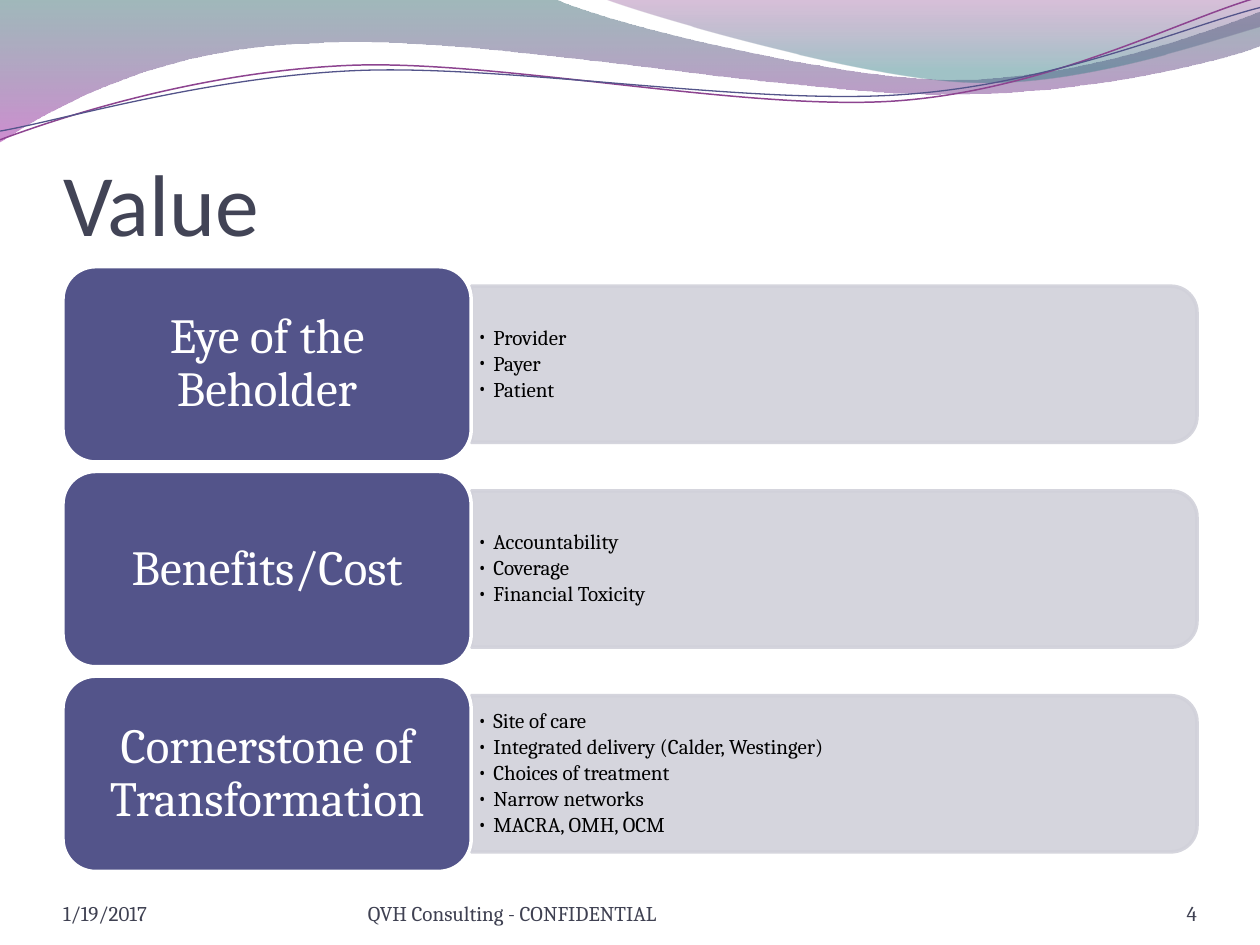
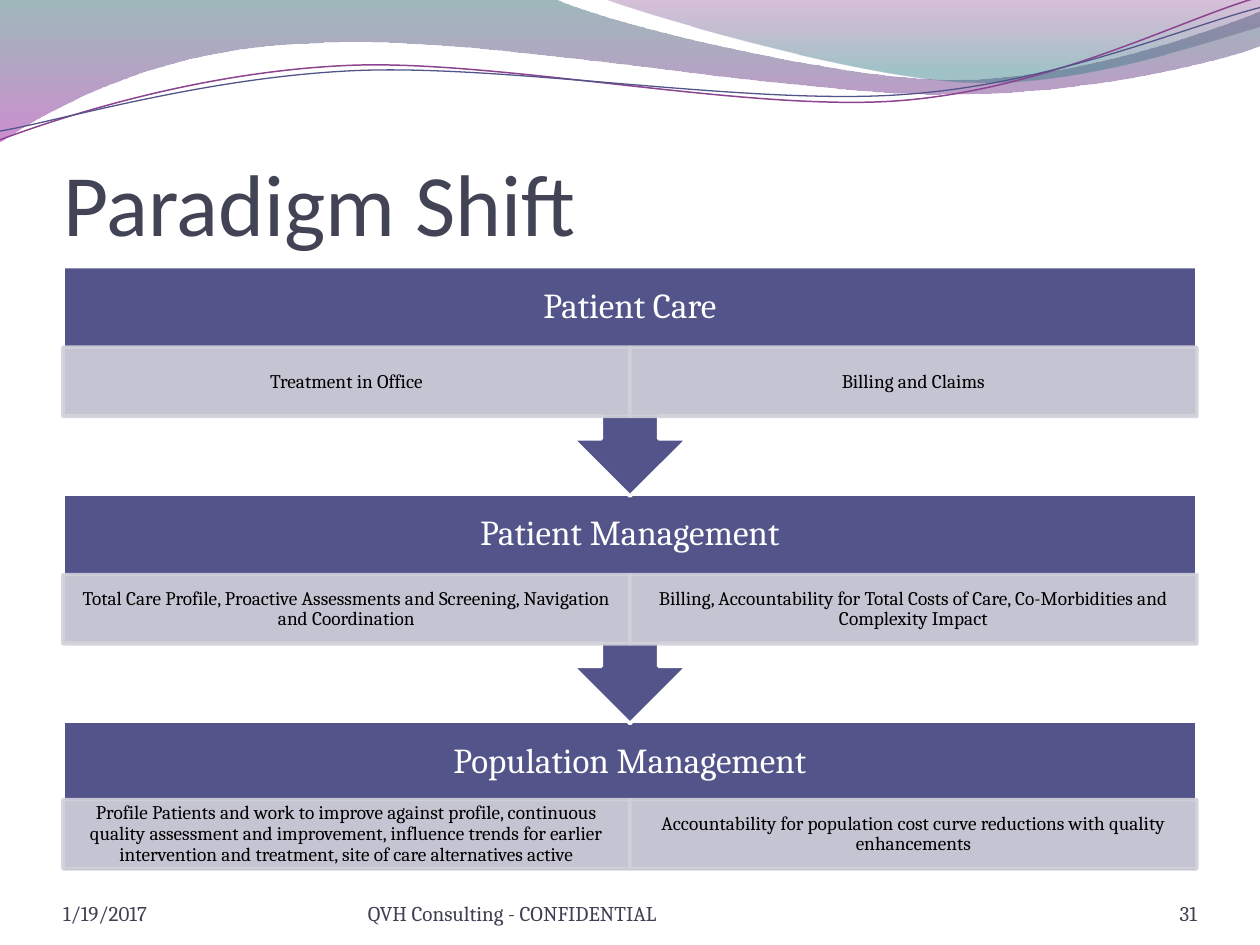
from collections import namedtuple
from dataclasses import dataclass
from itertools import cycle

from lxml.etree import SubElement
from pptx import Presentation
from pptx.dml.color import RGBColor as Rgb
from pptx.enum.shapes import MSO_SHAPE as Form
from pptx.enum.text import MSO_ANCHOR as Anchor, MSO_AUTO_SIZE as Fit, PP_ALIGN as Align
from pptx.oxml.ns import qn
from pptx.util import Pt

Box = namedtuple("Box", "x y w h")


@dataclass(frozen=True)
class Theme:
    head: str = "Calibri"
    body: str = "Cambria"
    title: str = "424456"
    foot: str = "3F4152"
    main: str = "53548A"
    pale: str = "D1D1DA"
    plum: str = "8D4490"
    white: str = "FFFFFF"
    black: str = "000000"
    teal: tuple = ((0, "2D6368", 45), (1, "A530A9", 55))
    rose: tuple = ((0, "7F2F82", 30), (0.8, "2F7B82", 45))
    huge: int = 50
    large: int = 28
    mid: int = 20
    small: int = 12
    tiny: int = 11
    edge: int = 2


T = Theme()
PAGE = Box(0, 0, 720, 540)
TITLE = Box(36, 55.4, 648, 90)
BODY = Box(36, 152.4, 648, 345.6)
FOOT = Box(36, 500.4, 648, 28.8)

SWEEP = [(0, 0), (316.8, -0.7),
         (342.7, 12.2, 478.1, 45.4, 545.8, 45.4), (614.2, 45.4, 689.8, 18.7, 720, 6.5),
         (720.7, 25.9), (707.8, 31.7, 626.4, 54.7, 537.1, 54),
         (447.8, 54, 275, 20.2, 185, 24.5), (92.9, 25.9, 33.1, 59.8, -0.7, 81.4)]
CREST = [(344.9, -0.7), (366.5, 7.9, 491, 44.6, 553.7, 46.8),
         (616.3, 49.7, 691.9, 23, 720, 15.1), (720, 0)]
UPPER = [(0, 79.9), (34.6, 67, 113.8, 41, 199.4, 37.4),
         (284.4, 33.8, 427, 64.1, 513.4, 57.6), (599.8, 51.1, 675.4, 10.8, 718.6, -1.4)]
LOWER = [(0, 74.9), (33.8, 69.1, 118.1, 43.9, 203.8, 40.3),
         (290.2, 36.7, 429.8, 60.5, 516.2, 54), (601.9, 48.2, 677.5, 15.1, 720, 4.3)]

VALUES = [
    ("Eye of the Beholder", ["Provider", "Payer", "Patient"]),
    ("Benefits/Cost", ["Accountability", "Coverage", "Financial Toxicity"]),
    ("Cornerstone of Transformation",
     ["Site of care", "Integrated delivery (Calder, Westinger)", "Choices of treatment",
      "Narrow networks", "MACRA, OMH, OCM"]),
]
STAGES = [
    ("Patient Care", ["Treatment in Office", "Billing and Claims"]),
    ("Patient Management",
     ["Total Care Profile, Proactive Assessments and Screening, Navigation and Coordination",
      "Billing, Accountability for Total Costs of Care, Co-Morbidities and Complexity Impact"]),
    ("Population Management",
     ["Profile Patients and work to improve against profile, continuous quality assessment "
      "and improvement, influence trends for earlier intervention and treatment, "
      "site of care alternatives active",
      "Accountability for population cost curve reductions with quality enhancements"]),
]


def rgb(code):
    return Rgb.from_string(code)


def points(box):
    return [Pt(side) for side in box]


def fade(shape, *levels):
    for node, level in zip(shape.element.iter(qn("a:srgbClr")), cycle(levels)):
        SubElement(node, qn("a:alpha")).set("val", str(level * 1000))


def bend(shape, steps):
    lines = iter(list(shape.element.iter(qn("a:lnTo"))))
    for step in steps[1:]:
        first = next(lines)
        if len(step) == 6:
            first.tag = qn("a:cubicBezTo")
            for _ in range(2):
                line = next(lines)
                first.append(line[0])
                line.getparent().remove(line)


def wave(slide, box, steps, close):
    spots = [(Pt(box.x + step[i]), Pt(box.y + step[i + 1]))
             for step in steps for i in range(0, len(step), 2)]
    pen = slide.shapes.build_freeform(*spots[0])
    pen.add_line_segments(spots[1:], close=close)
    shape = pen.convert_to_shape()
    bend(shape, steps)
    shape.shadow.inherit = False
    return shape


def band(slide, box):
    for steps, stops in ((SWEEP, T.teal), (CREST, T.rose)):
        area = wave(slide, box, steps, True)
        area.line.fill.background()
        area.fill.gradient()
        area.fill.gradient_angle = 270
        for stop, (place, code, _) in zip(area.fill.gradient_stops, stops):
            stop.position = place
            stop.color.rgb = rgb(code)
        fade(area, *[level for _, _, level in stops])
    for steps, code, width in ((UPPER, T.plum, 0.85), (LOWER, T.main, 0.75)):
        curve = wave(slide, box, steps, False)
        curve.fill.background()
        curve.line.color.rgb = rgb(code)
        curve.line.width = Pt(width)


def write(frame, lines, size, ink, pad=(0, 0, 0, 0), align=Align.CENTER,
          anchor=Anchor.MIDDLE, face=T.body, lead=0.9, dots=False):
    frame.word_wrap = True
    frame.auto_size = Fit.NONE
    frame.vertical_anchor = anchor
    (frame.margin_left, frame.margin_top,
     frame.margin_right, frame.margin_bottom) = points(pad)
    for n, line in enumerate(lines):
        para = frame.add_paragraph() if n else frame.paragraphs[0]
        para.text = line
        para.alignment = align
        para.line_spacing = lead
        if dots:
            para.space_after = Pt(1.9)
            props = para._p.get_or_add_pPr()
            props.set("marL", str(Pt(9)))
            props.set("indent", str(-Pt(9)))
            SubElement(props, qn("a:buFont")).set("typeface", face)
            SubElement(props, qn("a:buChar")).set("char", "•")
        font = para.font
        font.name, font.size = face, Pt(size)
        font.color.rgb = rgb(ink)


def label(slide, box, lines, size, ink, **style):
    write(slide.shapes.add_textbox(*points(box)).text_frame, lines, size, ink, **style)


def block(slide, form, box, fill, edge, turn=0):
    shape = slide.shapes.add_shape(form, *points(box))
    shape.shadow.inherit = False
    shape.rotation = turn
    shape.fill.solid()
    shape.fill.fore_color.rgb = rgb(fill)
    shape.line.color.rgb = rgb(edge)
    shape.line.width = Pt(T.edge)
    return shape


def footer(slide, box, number):
    parts = ((0, 168, "1/19/2017", Align.LEFT),
             (174.2, 264, "QVH Consulting - CONFIDENTIAL", Align.LEFT),
             (box.w - 60, 60, number, Align.RIGHT))
    for x, w, line, align in parts:
        label(slide, Box(box.x + x, box.y, w, box.h), [line], T.small, T.foot,
              align=align, anchor=Anchor.BOTTOM, lead=1)


def start(deck, title, number):
    slide = deck.slides.add_slide(deck.slide_layouts[5])
    band(slide, PAGE)
    head = slide.shapes.title
    head.left, head.top, head.width, head.height = points(TITLE)
    write(head.text_frame, [title], T.huge, T.title, pad=(0, 3.6, 0, 0),
          align=Align.LEFT, anchor=Anchor.BOTTOM, face=T.head, lead=1)
    footer(slide, FOOT, number)
    return slide


def card(slide, box, name, items):
    left = box.w * 0.36
    wide, tall = box.w - left, box.h * 0.8
    mid = Box(box.x + left + wide / 2, box.y + box.h / 2, wide, tall)
    panel = block(slide, Form.ROUND_2_SAME_RECTANGLE,
                  Box(mid.x - tall / 2, mid.y - wide / 2, tall, wide), T.pale, T.pale, 90)
    fade(panel, 90)
    label(slide, Box(box.x + left, mid.y - 40.3, wide - 4, 80.6), items, T.small, T.black,
          pad=(3.6, 2.2, 3.6, 2.2), align=Align.LEFT, dots=True)
    tile = block(slide, Form.ROUNDED_RECTANGLE, Box(box.x, box.y, left, box.h),
                 T.main, T.white)
    write(tile.text_frame, [name], T.large, T.white, pad=(8.6, 4.3, 8.6, 4.3))


def cards(slide, box):
    gap = 5.4
    tall = (box.h - gap * (len(VALUES) - 1)) / len(VALUES)
    for n, (name, items) in enumerate(VALUES):
        card(slide, Box(box.x, box.y + n * (tall + gap), box.w, tall), name, items)


def stage(slide, box, name, cells, last):
    if last:
        block(slide, Form.RECTANGLE, box, T.main, T.white)
    else:
        block(slide, Form.UP_ARROW_CALLOUT, box, T.main, T.white, 180)
    label(slide, Box(box.x, box.y, box.w, 46), [name], T.mid, T.white,
          pad=(11.4, 11.4, 11.4, 11.4))
    wide = box.w / len(cells)
    drop = 44.6 if last else 46
    for n, line in enumerate(cells):
        cell = block(slide, Form.RECTANGLE,
                     Box(box.x + n * wide, box.y + drop, wide, 39.6), T.pale, T.pale)
        fade(cell, 90)
        write(cell.text_frame, [line], T.tiny, T.black, pad=(6.5, 1.4, 6.5, 1.4))


def stages(slide, box):
    final = len(STAGES) - 1
    base = 85.7
    step = (box.h - base) / final
    for n in range(final, -1, -1):
        tall = base if n == final else step + 1.2
        stage(slide, Box(box.x, box.y + n * step, box.w, tall), *STAGES[n], n == final)


def main():
    deck = Presentation()
    deck.slide_width, deck.slide_height = Pt(PAGE.w), Pt(PAGE.h)
    cards(start(deck, "Value", "4"), BODY)
    stages(start(deck, "Paradigm Shift", "31"), BODY)
    deck.save("out.pptx")


if __name__ == "__main__":
    main()
